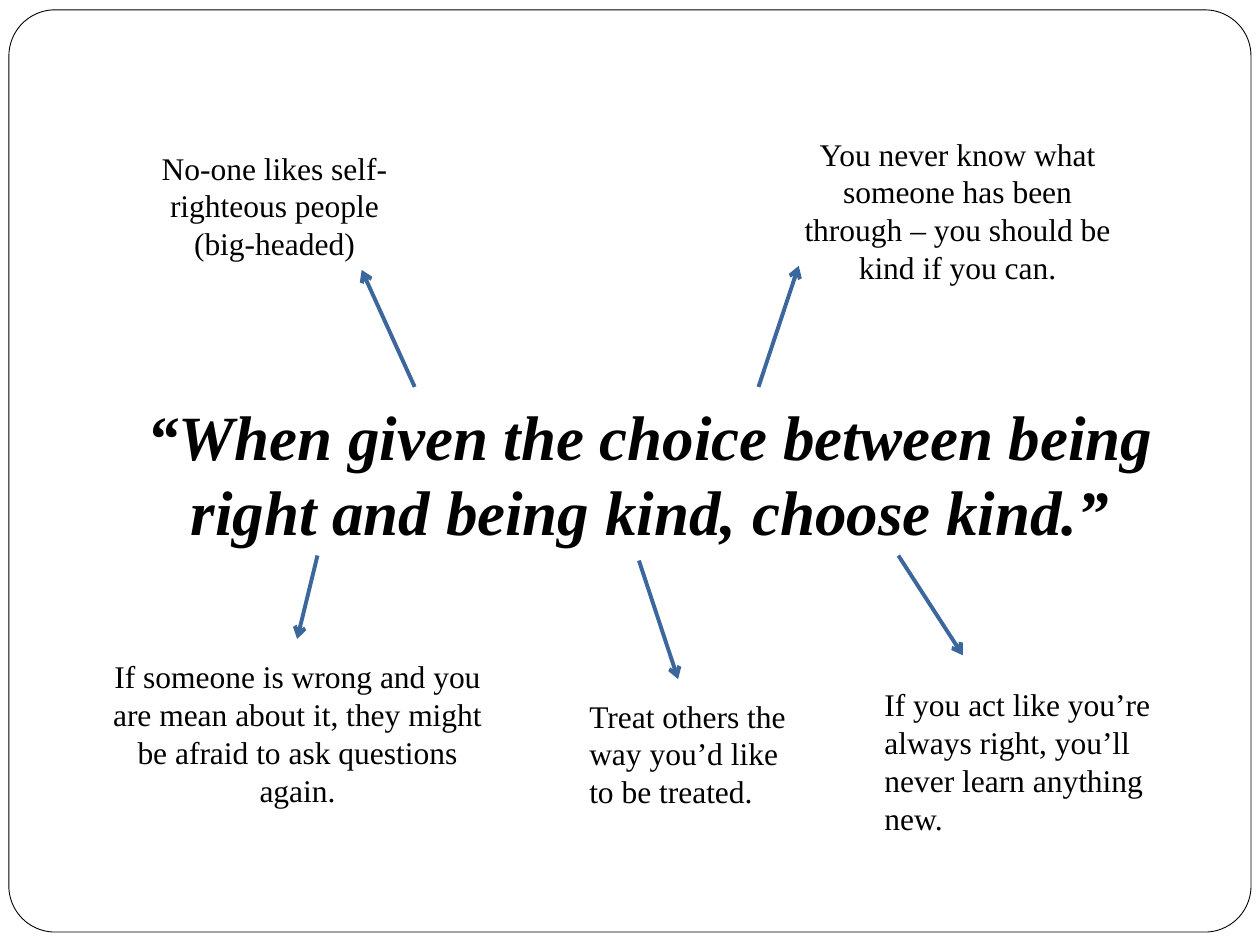
from pptx import Presentation
from pptx.dml.color import RGBColor
from pptx.enum import shapes, text
from pptx.oxml.ns import qn
from pptx import util as u
from lxml import etree

BLACK = RGBColor(0x00, 0x00, 0x00)
WHITE = RGBColor(0xFF, 0xFF, 0xFF)
BLUE = RGBColor(0x3B, 0x67, 0x9C)
FONT = "Times New Roman"
CENTER, LEFT = text.PP_ALIGN.CENTER, text.PP_ALIGN.LEFT


def format_text(p, size, align):
    p.alignment = align
    for r in p.runs:
        r.font.name = FONT
        r.font.size = u.Pt(size)
        r.font.color.rgb = BLACK


prs = Presentation()
prs.slide_width, prs.slide_height = u.Cm(25.4), u.Cm(19.05)
s = prs.slides.add_slide(prs.slide_layouts[1])
title = s.shapes.title
title.element.getparent().remove(title.element)

# Rounded frame, placed behind the quote
frame = s.shapes.add_shape(shapes.MSO_SHAPE.ROUNDED_RECTANGLE,
                           u.Cm(0.18), u.Cm(0.2), u.Cm(25.04), u.Cm(18.59))
frame.adjustments[0] = 0.05
frame.shadow.inherit = False
frame.fill.solid()
frame.fill.fore_color.rgb = WHITE
frame.line.color.rgb = BLACK
frame.line.width = u.Pt(0.5)
s.shapes[0].element.addprevious(frame.element)

# Quote
quote = s.placeholders[1]
quote.left, quote.top = u.Cm(2.31), u.Cm(3.18)
quote.width, quote.height = u.Cm(21.59), u.Cm(12.7)
tf = quote.text_frame
tf.text = "“When given the choice between being right and being kind, choose kind.”"
tf.vertical_anchor = text.MSO_ANCHOR.MIDDLE
p = tf.paragraphs[0]
pPr = p._p.get_or_add_pPr()
pPr.set("marL", "0")
pPr.set("indent", "0")
etree.SubElement(pPr, qn("a:buNone"))
p.space_before = u.Pt(0)
format_text(p, 36, CENTER)
p.runs[0].font.bold = True
p.runs[0].font.italic = True

# Reasons around the quote: left, top, width, height, alignment, wording
reasons = [
    (2.64, 2.87, 5.79, 2.57, CENTER,
     "No-one likes self-righteous people (big-headed)"),
    (15.8, 2.59, 7.01, 3.33, CENTER,
     "You never know what someone has been through – you should be kind if you can."),
    (17.58, 13.69, 7.01, 2.57, LEFT,
     "If you act like you’re always right, you’ll never learn anything new."),
    (1.9, 13.13, 8.2, 3.33, CENTER,
     "If someone is wrong and you are mean about it, they might be afraid to ask questions again."),
    (11.63, 13.92, 4.8, 2.57, LEFT,
     "Treat others the way you’d like to be treated."),
]
for left, top, width, height, align, wording in reasons:
    box = s.shapes.add_textbox(u.Cm(left), u.Cm(top), u.Cm(width), u.Cm(height))
    tf = box.text_frame
    tf.word_wrap = True
    tf.auto_size = text.MSO_AUTO_SIZE.SHAPE_TO_FIT_TEXT
    tf.text = wording
    format_text(tf.paragraphs[0], 18, align)

# Arrows from the quote to each reason: x1, y1, x2, y2
arrows = [
    (8.36, 7.8, 7.29, 5.44),
    (15.29, 7.8, 16.1, 5.36),
    (6.4, 11.2, 5.99, 12.88),
    (18.11, 11.2, 19.41, 13.21),
    (12.88, 11.3, 13.67, 13.69),
]
for points in arrows:
    arrow = s.shapes.add_connector(shapes.MSO_CONNECTOR.STRAIGHT,
                                   *[u.Cm(v) for v in points])
    arrow.line.color.rgb = BLUE
    arrow.line.width = u.Pt(2.25)
    etree.SubElement(arrow.line._get_or_add_ln(), qn("a:tailEnd"), type="arrow")
    etree.SubElement(arrow._element.spPr, qn("a:effectLst"))

prs.save("out.pptx")
